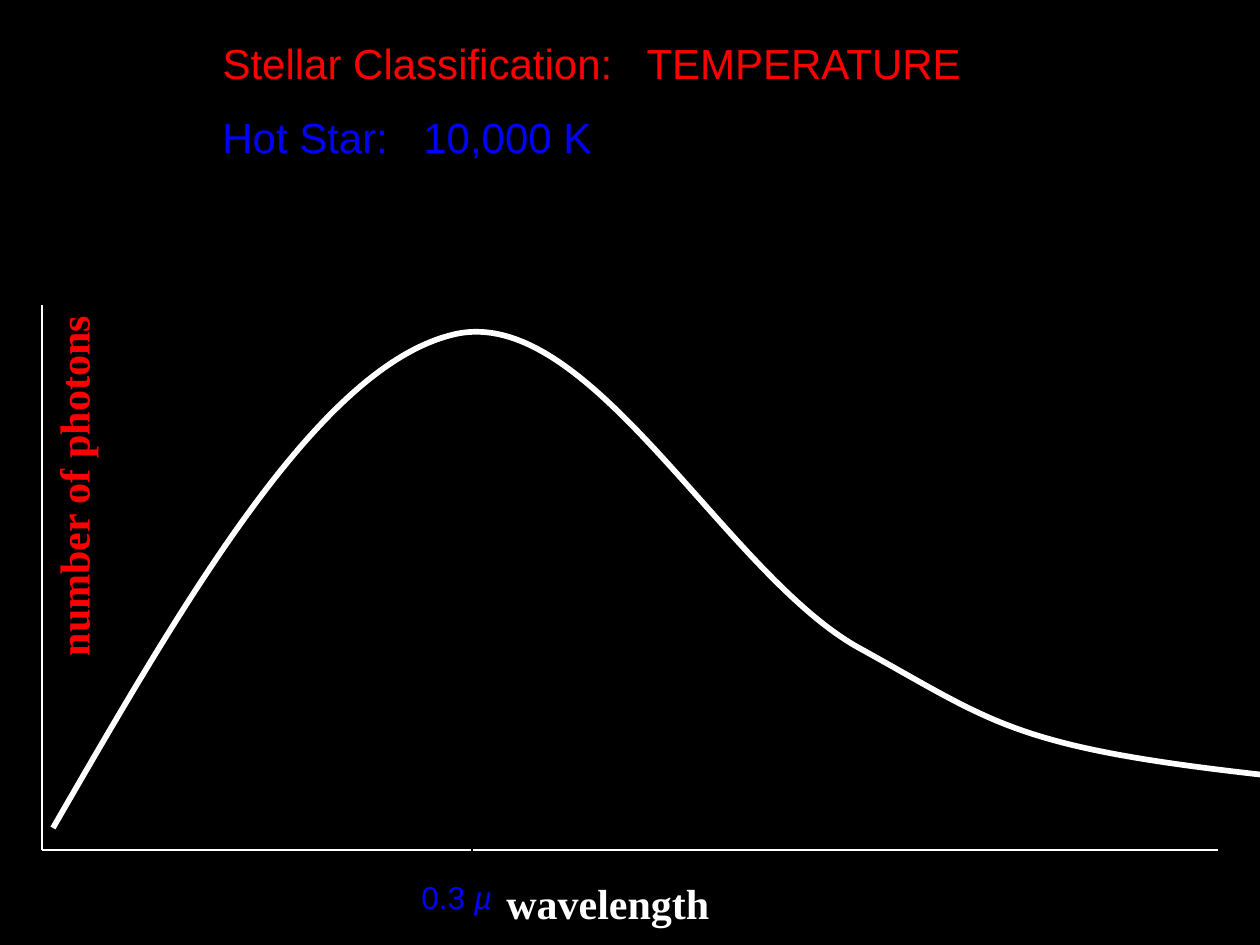
import pptx
import pptx.util
import pptx.dml.color
import pptx.enum.shapes
import pptx.enum.text
import pptx.oxml.ns
import lxml.etree

hex_color = pptx.dml.color.RGBColor.from_string
qn = pptx.oxml.ns.qn
Pt = pptx.util.Pt


def px(length):
    """Turn slide pixels (126 to the inch) into EMU."""
    return round(length * 914400 / 126)


def write(box, text, at, size=24, font="Arial", color="FFFFFF", bold=False,
          italic_tail="", tab=None):
    """Place a text box and fill it; tab is a tab stop in px."""
    box.left, box.top, box.width, box.height = map(px, at)
    frame = box.text_frame
    frame.word_wrap = True
    frame.auto_size = pptx.enum.text.MSO_AUTO_SIZE.NONE
    frame.vertical_anchor = pptx.enum.text.MSO_ANCHOR.TOP
    paragraph = frame.paragraphs[0]
    paragraph.alignment = pptx.enum.text.PP_ALIGN.LEFT
    if tab:
        properties = paragraph._p.get_or_add_pPr()
        stops = lxml.etree.SubElement(properties, qn("a:tabLst"))
        lxml.etree.SubElement(stops, qn("a:tab"), pos=str(px(tab)), algn="l")
    for part, italic in ((text, False), (italic_tail, True)):
        if part:
            run = paragraph.add_run()
            run.text = part
            run.font.size = Pt(size)
            run.font.name = font
            run.font.bold = bold
            run.font.italic = italic
            run.font.color.rgb = hex_color(color)


deck = pptx.Presentation()
deck.slide_width, deck.slide_height = px(1260), px(945)
slide = deck.slides.add_slide(deck.slide_layouts[5])
slide.background.fill.solid()
slide.background.fill.fore_color.rgb = hex_color("000000")
shapes = slide.shapes

# Headings
write(shapes.title, "Stellar Classification:\tTEMPERATURE", (210, 31, 829, 64),
      color="FF0000", tab=424)
write(shapes.add_textbox(0, 0, 0, 0), "Hot Star:\t10,000 K", (210, 105, 829, 64),
      color="0000FF", tab=201)

# Axes, and the peak mark that cuts the wavelength axis
for x1, y1, x2, y2, color in (
    (42, 305, 42, 850, "FBFFFC"),
    (42, 850, 1218, 850, "FFFFFF"),
    (472, 829, 472, 872, "000000"),
):
    axis = shapes.add_connector(pptx.enum.shapes.MSO_CONNECTOR.STRAIGHT,
                                px(x1), px(y1), px(x2), px(y2))
    axis.line.color.rgb = hex_color(color)
    axis.line.width = Pt(0.75)
    lxml.etree.SubElement(axis._element.spPr, qn("a:effectLst"))

# Spectrum: Bézier pieces, each given by two control points and an end point
spectrum_start = (53, 828)
spectrum_points = [
    (187, 596), (321, 364), (456, 334),
    (591, 305), (726, 576), (861, 649),
    (995, 723), (1013, 747), (1264, 775),
    (1515, 804), (2166, 810), (2364, 818),
    (2562, 824), (2507, 820), (2453, 818),
]
outline = shapes.build_freeform(*map(px, spectrum_start))
outline.add_line_segments([(px(x), px(y)) for x, y in spectrum_points], close=False)
spectrum = outline.convert_to_shape()

# Join each three straight segments into one cubic curve
segments = list(spectrum._element.iter(qn("a:lnTo")))
curve = segments[0].getparent()
for first in range(0, len(segments), 3):
    piece = lxml.etree.SubElement(curve, qn("a:cubicBezTo"))
    for segment in segments[first:first + 3]:
        piece.append(segment[0])
        curve.remove(segment)
spectrum.shadow.inherit = False
spectrum.fill.background()
spectrum.line.color.rgb = hex_color("FFFFFF")
spectrum.line.width = Pt(3.25)

# Axis labels
photons = shapes.add_textbox(0, 0, 0, 0)
write(photons, "number of photons", (-114, 450, 374, 63),
      font="Times New Roman", color="FF0000", bold=True)
photons.rotation = 270
write(shapes.add_textbox(0, 0, 0, 0), "wavelength", (494, 871, 518, 64),
      font="Times New Roman", bold=True)
write(shapes.add_textbox(0, 0, 0, 0), "0.3 ", (409, 872, 126, 50),
      size=18, color="0000FF", italic_tail="µ")

deck.save("out.pptx")
